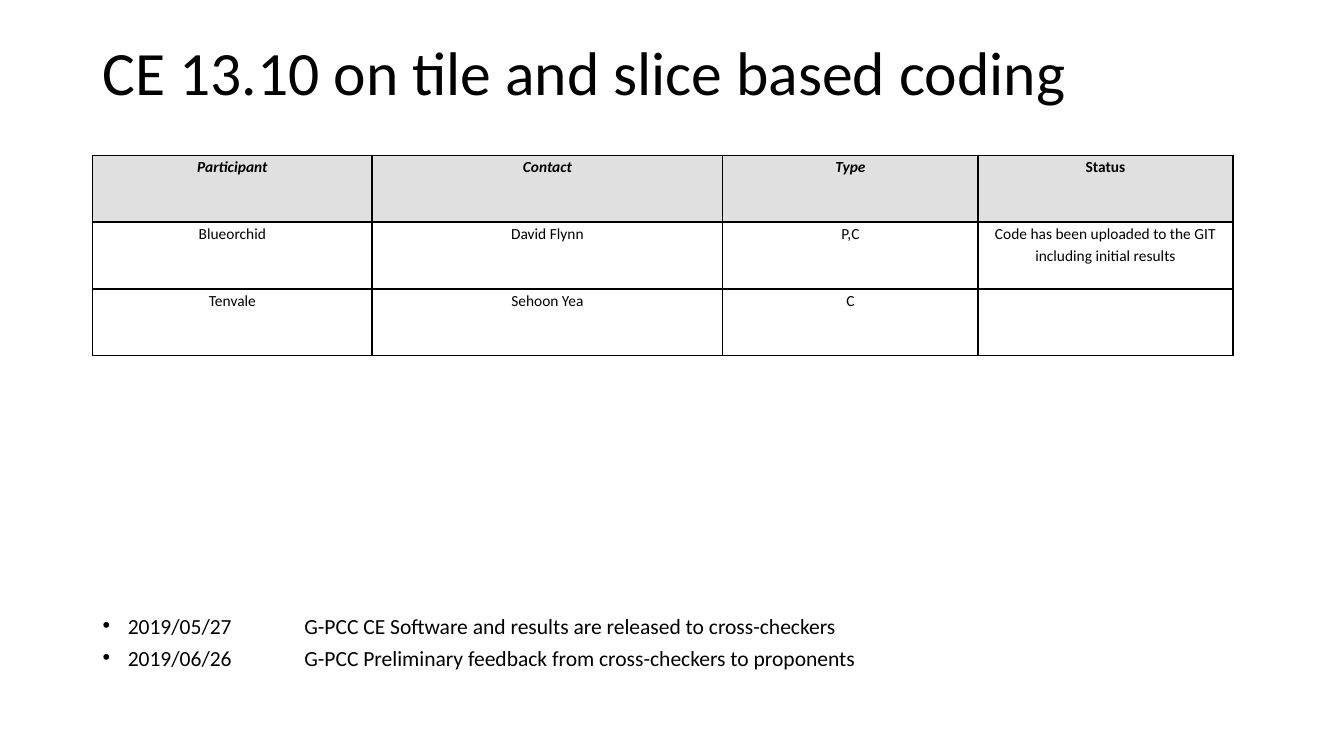
from lxml import etree
from pptx import Presentation
from pptx.dml.color import RGBColor
from pptx.enum.text import MSO_ANCHOR, PP_ALIGN
from pptx.oxml.ns import qn
from pptx.util import Inches, Pt

CENTER, LEFT = PP_ALIGN.CENTER, PP_ALIGN.LEFT
TOP, MIDDLE = MSO_ANCHOR.TOP, MSO_ANCHOR.MIDDLE

COLORS = {"text": "000000", "header": "E0E0E0", "body": "FFFFFF", "border": "000001"}
FONT = "Calibri"
PAGE_WIDTH, PAGE_HEIGHT = 13.33, 7.5
MARGIN, CONTENT_WIDTH = 0.92, 11.5

COLUMN_WIDTHS = [2.77, 3.48, 2.53, 2.53]
ROW_HEIGHT = 1.99 / 3
PARTICIPANTS = [
    ["Participant", "Contact", "Type", "Status"],
    ["Blueorchid", "David Flynn", "P,C",
     "Code has been uploaded to the GIT including initial results"],
    ["Tenvale", "Sehoon Yea", "C", ""],
]
MILESTONES = [
    "2019/05/27\tG-PCC CE Software and results are released to cross-checkers",
    "2019/06/26\tG-PCC Preliminary feedback from cross-checkers to proponents",
]


def write(para, text, size, bold=False, italic=False, align=LEFT,
          spacing=1.0, before=0, after=0):
    para.alignment = align
    para.line_spacing = spacing
    para.space_before, para.space_after = Pt(before), Pt(after)
    span = para.add_run()
    span.text = text
    span.font.name, span.font.size = FONT, Pt(size)
    span.font.bold, span.font.italic = bold, italic
    span.font.color.rgb = RGBColor.from_string(COLORS["text"])


def add_bullet(para, indent, tab):
    properties = para._p.get_or_add_pPr()
    properties.set("marL", str(Inches(indent)))
    properties.set("indent", str(-Inches(indent)))
    etree.SubElement(properties, qn("a:buFont"), typeface="Arial")
    etree.SubElement(properties, qn("a:buChar"), char="•")
    tabs = etree.SubElement(properties, qn("a:tabLst"))
    etree.SubElement(tabs, qn("a:tab"), pos=str(Inches(tab)), algn="l")


def add_borders(cell):
    properties = cell._tc.get_or_add_tcPr()
    for index, side in enumerate(("a:lnL", "a:lnR", "a:lnT", "a:lnB")):
        line = etree.Element(qn(side), w=str(Pt(1)))
        fill = etree.SubElement(line, qn("a:solidFill"))
        etree.SubElement(fill, qn("a:srgbClr"), val=COLORS["border"])
        properties.insert(index, line)


def add_text_frame(page, box, anchor):
    frame = page.shapes.add_textbox(*map(Inches, box)).text_frame
    frame.word_wrap = True
    frame.vertical_anchor = anchor
    return frame


def add_title(page, box, text):
    frame = add_text_frame(page, box, MIDDLE)
    write(frame.paragraphs[0], text, size=44, spacing=0.9)


def add_participants(page, box):
    table = page.shapes.add_table(
        len(PARTICIPANTS), len(COLUMN_WIDTHS), *map(Inches, box)).table
    for column, width in zip(table.columns, COLUMN_WIDTHS):
        column.width = Inches(width)
    for row_index, texts in enumerate(PARTICIPANTS):
        table.rows[row_index].height = Inches(ROW_HEIGHT)
        header = row_index == 0
        for column_index, text in enumerate(texts):
            cell = table.cell(row_index, column_index)
            cell.margin_top = cell.margin_bottom = 0
            cell.margin_left = cell.margin_right = Inches(0.05 if column_index < 2 else 0)
            cell.fill.solid()
            cell.fill.fore_color.rgb = RGBColor.from_string(
                COLORS["header" if header else "body"])
            add_borders(cell)
            if text:
                write(cell.text_frame.paragraphs[0], text, size=11, bold=header,
                      italic=header and text != "Status", align=CENTER,
                      spacing=1.15, after=10)


def add_milestones(page, box):
    frame = add_text_frame(page, box, TOP)
    for index, text in enumerate(MILESTONES):
        para = frame.add_paragraph() if index else frame.paragraphs[0]
        write(para, text, size=15.4, spacing=0.7, before=10)
        add_bullet(para, indent=0.25, tab=2)


def main():
    deck = Presentation()
    deck.slide_width, deck.slide_height = Inches(PAGE_WIDTH), Inches(PAGE_HEIGHT)
    page = deck.slides.add_slide(deck.slide_layouts[6])

    # Title
    add_title(page, (MARGIN, 0.26, CONTENT_WIDTH, 0.98),
              "CE 13.10 on tile and slice based coding")
    # Dates
    add_milestones(page, (MARGIN, 6.1, CONTENT_WIDTH, 0.66))
    # Participant table
    add_participants(page, (MARGIN, 1.54, sum(COLUMN_WIDTHS),
                            ROW_HEIGHT * len(PARTICIPANTS)))
    deck.save("out.pptx")


if __name__ == "__main__":
    main()
